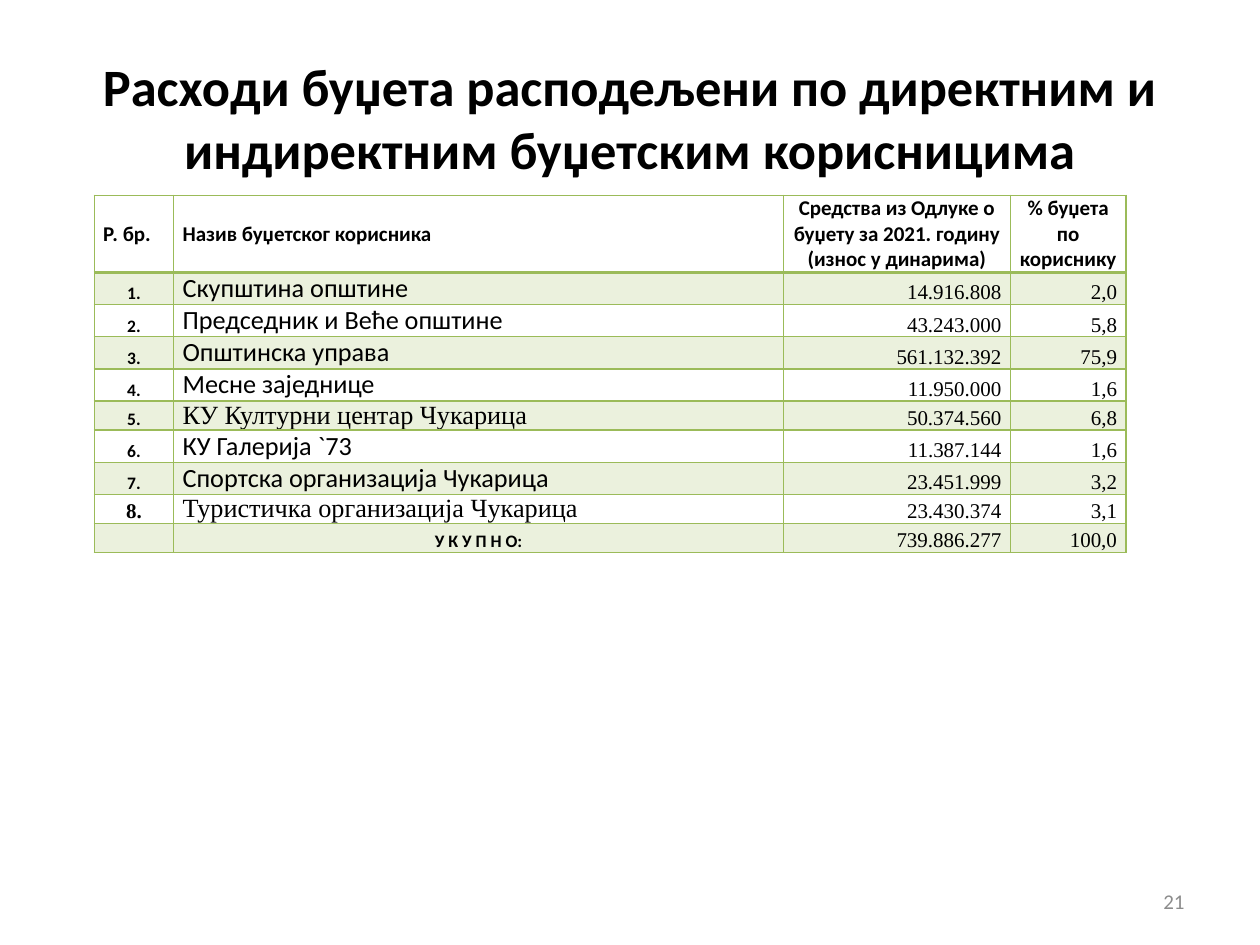
import dataclasses

import lxml.etree
import pptx
import pptx.dml.color
import pptx.enum.text
import pptx.oxml.ns
import pptx.util
from pptx.util import Cm

ALIGN = pptx.enum.text.PP_ALIGN
ANCHOR = pptx.enum.text.MSO_ANCHOR


@dataclasses.dataclass(frozen=True)
class Theme:
    sans: str = "Calibri"
    serif: str = "Times New Roman"
    ink: str = "000000"
    muted: str = "8C8C8C"
    accent: str = "9BBB59"
    band_opacity: int = 20
    title_size: int = 30
    name_size: int = 15
    text_size: int = 12
    index_size: int = 10


@dataclasses.dataclass(frozen=True)
class Box:
    left: float
    top: float
    width: float
    height: float


THEME = Theme()
HEADINGS = [
    ("Р. бр.", ALIGN.LEFT),
    ("Назив буџетског корисника", ALIGN.LEFT),
    ("Средства из Одлуке о буџету за 2021. годину (износ у динарима)", ALIGN.CENTER),
    ("% буџета по кориснику", ALIGN.CENTER),
]
BENEFICIARIES = [
    ("Скупштина општине", "14.916.808", "2,0"),
    ("Председник и Веће општине", "43.243.000", "5,8"),
    ("Општинска управа", "561.132.392", "75,9"),
    ("Месне заједнице", "11.950.000", "1,6"),
    ("КУ Културни центар Чукарица", "50.374.560", "6,8"),
    ("КУ Галерија `73", "11.387.144", "1,6"),
    ("Спортска организација Чукарица", "23.451.999", "3,2"),
    ("Туристичка организација Чукарица", "23.430.374", "3,1"),
]
TOTAL = ("У К У П Н О:", "739.886.277", "100,0")
SERIF_NAMES = {5, 8}
SERIF_INDEXES = {8}
COLUMN_SHARES = [0.077, 0.591, 0.22, 0.112]
HEADER_HEIGHT = 1.52
ROW_HEIGHT = 0.58


def write(paragraph, text, size, font=THEME.sans, bold=False, align=ALIGN.LEFT, color=THEME.ink):
    paragraph.alignment = align
    run = paragraph.add_run()
    run.text = text
    run.font.size = pptx.util.Pt(size)
    run.font.name = font
    run.font.bold = bold
    run.font.color.rgb = pptx.dml.color.RGBColor.from_string(color)


def place(shape, box):
    shape.left, shape.top = Cm(box.left), Cm(box.top)
    shape.width, shape.height = Cm(box.width), Cm(box.height)


def add_xml(parent, tag, **attributes):
    return lxml.etree.SubElement(parent, pptx.oxml.ns.qn(tag), attributes)


def border_cell(cell, top, bottom):
    properties = cell._tc.get_or_add_tcPr()
    sides = [("a:lnL", 1), ("a:lnR", 1), ("a:lnT", top), ("a:lnB", bottom)]
    for position, (tag, points) in enumerate(sides):
        line = add_xml(properties, tag, w=str(pptx.util.Pt(points)))
        add_xml(add_xml(line, "a:solidFill"), "a:srgbClr", val=THEME.accent)
        properties.insert(position, line)


def fill_cell(cell, banded):
    if not banded:
        cell.fill.background()
        return
    cell.fill.solid()
    cell.fill.fore_color.rgb = pptx.dml.color.RGBColor.from_string(THEME.accent)
    tint = cell._tc.tcPr.find(".//" + pptx.oxml.ns.qn("a:srgbClr"))
    add_xml(tint, "a:alpha", val=str(THEME.band_opacity * 1000))


def format_cell(cell, row):
    cell.margin_left = cell.margin_right = Cm(0.18)
    cell.margin_top = cell.margin_bottom = 0
    cell.vertical_anchor = ANCHOR.BOTTOM if row else ANCHOR.MIDDLE
    fill_cell(cell, row % 2 == 1)
    border_cell(cell, top=2 if row == 1 else 1, bottom=1 if row else 2)


def write_amounts(amount_cells, amounts):
    for cell, amount in zip(amount_cells, amounts):
        write(cell.text_frame.paragraphs[0], amount, THEME.text_size, THEME.serif, align=ALIGN.RIGHT)


def write_beneficiary(cells, number, beneficiary):
    name, *amounts = beneficiary
    index_style = (
        (THEME.text_size, THEME.serif) if number in SERIF_INDEXES else (THEME.index_size, THEME.sans)
    )
    name_font = THEME.serif if number in SERIF_NAMES else THEME.sans
    write(cells[0].text_frame.paragraphs[0], f"{number}.", *index_style, bold=True, align=ALIGN.CENTER)
    write(cells[1].text_frame.paragraphs[0], name, THEME.name_size, name_font)
    write_amounts(cells[2:], amounts)


def write_total(cells):
    label, *amounts = TOTAL
    add_xml(cells[0].text_frame.paragraphs[0]._p, "a:endParaRPr", sz=str(THEME.index_size * 100))
    write(cells[1].text_frame.paragraphs[0], label, THEME.index_size, bold=True, align=ALIGN.CENTER)
    write_amounts(cells[2:], amounts)


def add_title(slide, box):
    title = slide.shapes.title
    place(title, box)
    title.text_frame.vertical_anchor = ANCHOR.MIDDLE
    write(
        title.text_frame.paragraphs[0],
        "Расходи буџета расподељени по директним и индиректним буџетским корисницима",
        THEME.title_size, bold=True, align=ALIGN.CENTER,
    )


def add_budget_table(slide, box):
    budget = slide.shapes.add_table(
        len(BENEFICIARIES) + 2, len(HEADINGS),
        Cm(box.left), Cm(box.top), Cm(box.width), Cm(box.height),
    ).table
    budget.first_row = budget.horz_banding = False
    for column, share in zip(budget.columns, COLUMN_SHARES):
        column.width = Cm(box.width * share)
    for number, row in enumerate(budget.rows):
        row.height = Cm(ROW_HEIGHT if number else HEADER_HEIGHT)
        for cell in row.cells:
            format_cell(cell, number)

    header, *body, total = [list(row.cells) for row in budget.rows]
    for cell, (heading, align) in zip(header, HEADINGS):
        write(cell.text_frame.paragraphs[0], heading, THEME.text_size, bold=True, align=align)
    for number, (cells, beneficiary) in enumerate(zip(body, BENEFICIARIES), start=1):
        write_beneficiary(cells, number, beneficiary)
    write_total(total)


def add_page_number(slide, box):
    page_number = slide.shapes.add_textbox(0, 0, 0, 0)
    place(page_number, box)
    page_number.text_frame.word_wrap = True
    page_number.text_frame.vertical_anchor = ANCHOR.MIDDLE
    write(
        page_number.text_frame.paragraphs[0], "21", THEME.text_size,
        align=ALIGN.RIGHT, color=THEME.muted,
    )


def main():
    deck = pptx.Presentation()
    deck.slide_width, deck.slide_height = Cm(25.4), Cm(19.05)
    slide = deck.slides.add_slide(deck.slide_layouts.get_by_name("Title Only"))
    add_title(slide, Box(1.27, 0.76, 22.86, 3.18))
    add_budget_table(slide, Box(1.9, 3.94, 20.8, HEADER_HEIGHT + 9 * ROW_HEIGHT))
    add_page_number(slide, Box(18.2, 17.66, 5.93, 1.01))
    deck.save("out.pptx")


if __name__ == "__main__":
    main()
